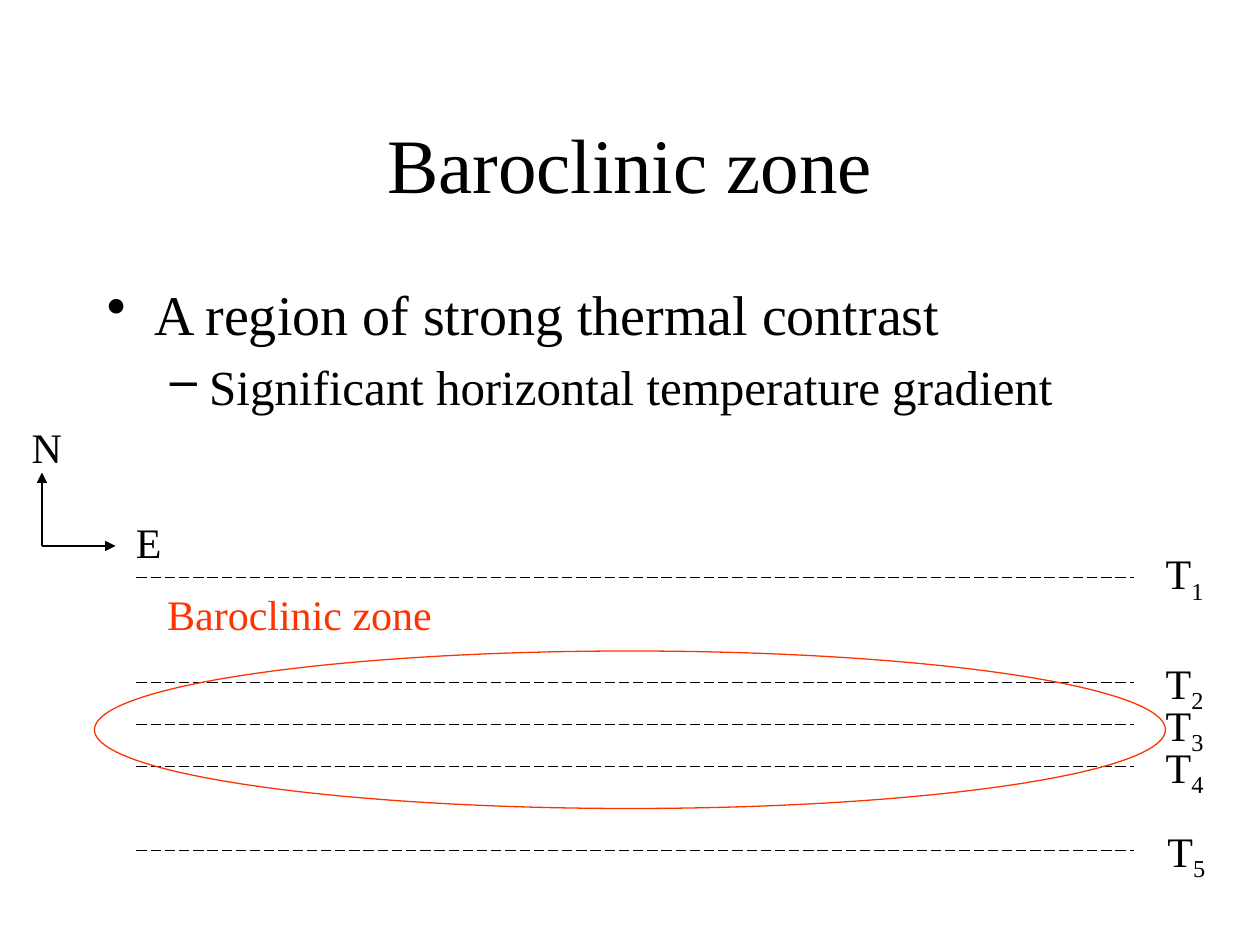
import pptx
import pptx.util
import pptx.dml.color
import pptx.enum.dml
import pptx.enum.shapes
import pptx.enum.text
from dataclasses import dataclass
from lxml import etree
from pptx.oxml.ns import qn

Pt = pptx.util.Pt
RGB = pptx.dml.color.RGBColor
ALIGN = pptx.enum.text.PP_ALIGN


@dataclass(frozen=True)
class Theme:
    font: str = "Times New Roman"
    ink: RGB = RGB(0, 0, 0)
    accent: RGB = RGB(0xFF, 0x33, 0x00)
    title: int = 44
    point: int = 32
    subpoint: int = 28
    label: int = 24
    line: float = 0.75


THEME = Theme()


def style(font, size, color=THEME.ink):
    font.name, font.size = THEME.font, Pt(size)
    font.color.rgb = color


def add_frame(slide, left, top, width, height, wrap=True):
    frame = slide.shapes.add_textbox(Pt(left), Pt(top), Pt(width), Pt(height)).text_frame
    frame.word_wrap = wrap
    return frame


def add_label(slide, left, top, width, text, color=THEME.ink, subscript=""):
    frame = add_frame(slide, left, top, width, 36, wrap=False)
    frame.auto_size = pptx.enum.text.MSO_AUTO_SIZE.SHAPE_TO_FIT_TEXT
    frame.text = text
    paragraph = frame.paragraphs[0]
    if subscript:
        paragraph.add_run().text = subscript
    for run in paragraph.runs:
        style(run.font, THEME.label, color)
    if subscript:
        paragraph.runs[-1].font._element.set("baseline", "-25000")


def add_line(slide, x1, y1, x2, y2, dash=None, arrow=False):
    line = slide.shapes.add_connector(
        pptx.enum.shapes.MSO_CONNECTOR.STRAIGHT, Pt(x1), Pt(y1), Pt(x2), Pt(y2))
    line.line.color.rgb = THEME.ink
    line.line.width = Pt(THEME.line)
    if dash:
        line.line.dash_style = dash
    properties = line._element.spPr
    if arrow:
        etree.SubElement(properties.find(qn("a:ln")), qn("a:tailEnd"), type="triangle")
    etree.SubElement(properties, qn("a:effectLst"))


def add_title(slide, left, top, width, height):
    frame = add_frame(slide, left, top, width, height)
    frame.vertical_anchor = pptx.enum.text.MSO_ANCHOR.MIDDLE
    frame.text = "Baroclinic zone"
    frame.paragraphs[0].alignment = ALIGN.CENTER
    style(frame.paragraphs[0].runs[0].font, THEME.title)


def add_definition(slide, left, top, width, height):
    frame = add_frame(slide, left, top, width, height)
    points = [
        ("A region of strong thermal contrast", "•", THEME.point, 27, 27, 0),
        ("Significant horizontal temperature gradient", "–", THEME.subpoint, 58.5, 22.5, 6),
    ]
    for level, (text, bullet, size, margin, hanging, space) in enumerate(points):
        paragraph = frame.add_paragraph() if level else frame.paragraphs[0]
        paragraph.text = text
        paragraph.level = level
        paragraph.space_before = Pt(space)
        properties = paragraph._p.get_or_add_pPr()
        properties.set("marL", str(Pt(margin)))
        properties.set("indent", str(-Pt(hanging)))
        etree.SubElement(properties, qn("a:buChar"), char=bullet)
        style(paragraph.runs[0].font, size)


def add_compass(slide, left, top, arm):
    origin = top + arm
    add_line(slide, left, origin, left, top, arrow=True)
    add_line(slide, left, origin, left + arm, origin, arrow=True)
    add_label(slide, left - 13, top - 32.4, 32, "N")
    add_label(slide, left + arm + 4.5, origin - 20.4, 29, "E")


def add_isotherms(slide, left, top, width):
    # Offset of each isotherm, with the rise and gap of its label
    isotherms = [(0, 20.4, 11), (60, 18, 11), (84, 18, 11), (108, 18, 11), (156, 18, 12)]
    right = left + width
    for number, (offset, rise, gap) in enumerate(isotherms, 1):
        y = top + offset
        add_line(slide, left, y, right, y, dash=pptx.enum.dml.MSO_LINE.LONG_DASH)
        add_label(slide, right + gap, y - rise, 37.5, "T", subscript=str(number))


def add_zone(slide, left, top, width, height):
    zone = slide.shapes.add_shape(
        pptx.enum.shapes.MSO_SHAPE.OVAL, Pt(left), Pt(top), Pt(width), Pt(height))
    zone.shadow.inherit = False
    zone.fill.background()
    zone.line.color.rgb = THEME.accent
    zone.line.width = Pt(THEME.line)
    add_label(slide, left + 34.5, top - 39, 165.5, "Baroclinic zone", THEME.accent)


def main():
    deck = pptx.Presentation()
    deck.slide_width, deck.slide_height = Pt(720), Pt(540)
    slide = deck.slides.add_slide(deck.slide_layouts[6])

    # Heading and definition
    add_title(slide, 54, 48, 612, 90)
    add_definition(slide, 54, 156, 612, 96)

    # Map of isotherms
    add_isotherms(slide, 78, 330, 570)
    add_compass(slide, 24, 270, 42)
    add_zone(slide, 54, 372, 612, 90)

    deck.save("out.pptx")


if __name__ == "__main__":
    main()
